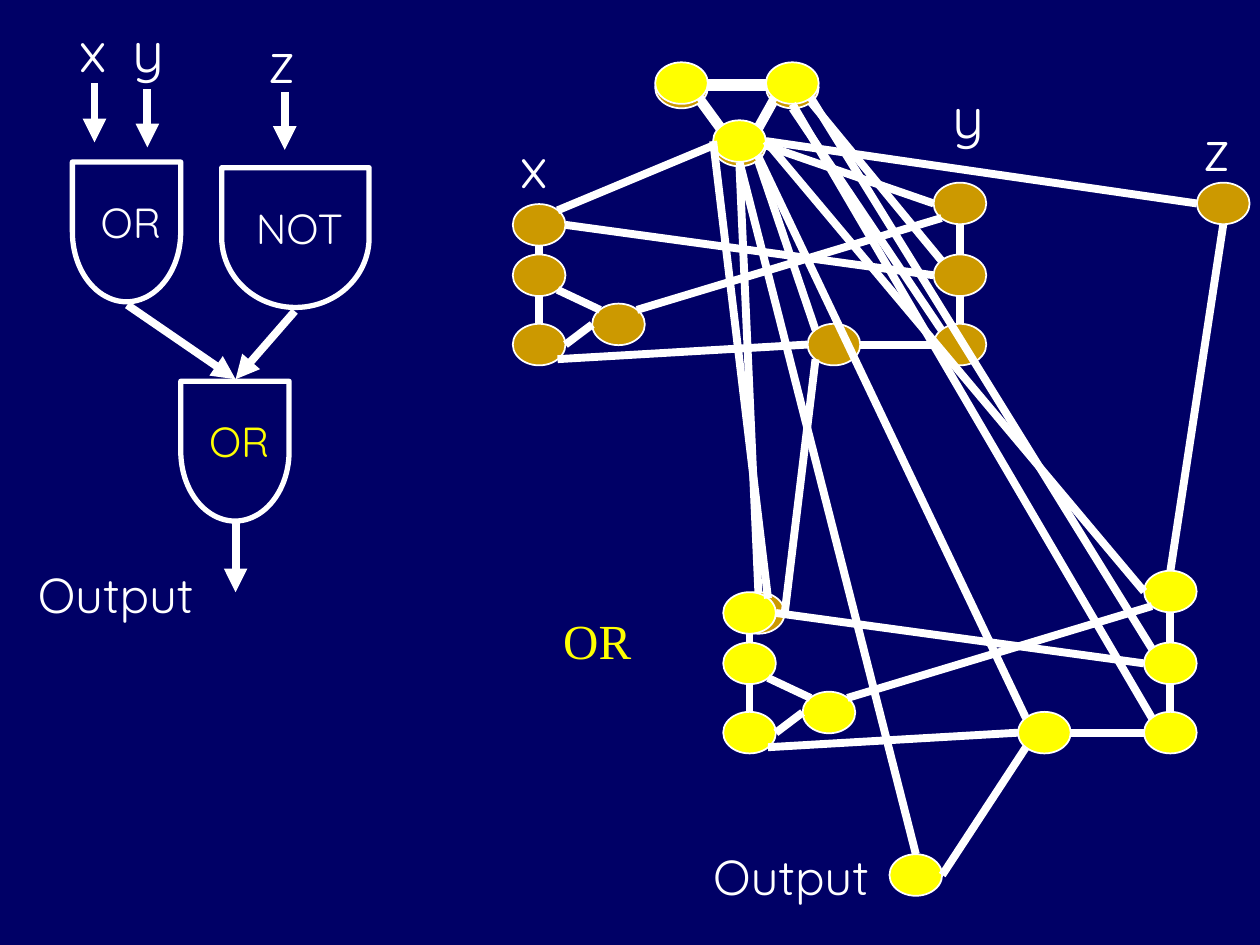
from lxml.etree import SubElement
from pptx import Presentation
from pptx.dml.color import RGBColor
from pptx.enum.shapes import MSO_CONNECTOR, MSO_SHAPE
from pptx.enum.text import MSO_ANCHOR, MSO_AUTO_SIZE, PP_ALIGN
from pptx.oxml.ns import qn
from pptx.util import Inches, Pt

NAVY = RGBColor(0x00, 0x00, 0x66)
WHITE = RGBColor(0xFF, 0xFF, 0xFF)
YELLOW = RGBColor(0xFF, 0xFF, 0x00)
GOLD = RGBColor(0xCC, 0x99, 0x00)
SANS, SERIF = "Quicksand", "Times New Roman"

presentation = Presentation()
presentation.slide_width, presentation.slide_height = Inches(10), Inches(7.5)
slide = presentation.slides.add_slide(presentation.slide_layouts[6])
slide.background.fill.solid()
slide.background.fill.fore_color.rgb = NAVY

# Grid of 100 columns by 75 rows
COLUMN = presentation.slide_width / 100
ROW = presentation.slide_height / 75

# Graph node size, and its ports as shares of that size
NODE_WIDTH, NODE_HEIGHT = 4.18, 3.3
PORTS = {
    "top": (0.5, 0), "bottom": (0.5, 1), "left": (0, 0.5), "right": (1, 0.5),
    "top left": (0.15, 0.15), "top right": (0.85, 0.15),
    "bottom left": (0.15, 0.85), "bottom right": (0.85, 0.85),
}


def add_line(start, end, arrow=False):
    (x1, y1), (x2, y2) = start, end
    connector = slide.shapes.add_connector(
        MSO_CONNECTOR.STRAIGHT, int(x1 * COLUMN), int(y1 * ROW), int(x2 * COLUMN), int(y2 * ROW))
    connector.line.color.rgb = WHITE
    connector.line.width = Pt(4.5)
    if arrow:
        SubElement(connector.line._get_or_add_ln(), qn("a:tailEnd"), type="triangle")
    SubElement(connector.element.spPr, qn("a:effectLst"))


def add_node(left, top, color):
    """Draw a graph node and return the positions of its ports."""
    node = slide.shapes.add_shape(
        MSO_SHAPE.OVAL, int(left * COLUMN), int(top * ROW),
        int(NODE_WIDTH * COLUMN), int(NODE_HEIGHT * ROW))
    node.shadow.inherit = False
    node.fill.solid()
    node.fill.fore_color.rgb = color
    node.line.color.rgb = WHITE
    node.line.width = Pt(1)
    return {port: (left + across * NODE_WIDTH, top + down * NODE_HEIGHT)
            for port, (across, down) in PORTS.items()}


captions = []  # text frame, text, size, font, colour, wrap

# Logic gates, turned so that the round side points down
for text, left, top, length, breadth, color in [
    ("OR", 4.5, 14.1, 11.1, 8.6, WHITE),
    ("OR", 13.1, 31.5, 11.1, 8.6, YELLOW),
    ("NOT", 17.9, 13, 11.1, 11.7, WHITE),
]:
    gate = slide.shapes.add_shape(
        MSO_SHAPE.FLOWCHART_DELAY, int(left * COLUMN), int(top * ROW),
        int(length * COLUMN), int(breadth * ROW))
    gate.rotation = 90
    gate.element.spPr.xfrm.set("flipV", "1")
    gate.shadow.inherit = False
    gate.fill.background()
    gate.line.color.rgb = WHITE
    gate.line.width = Pt(3)
    gate.text_frame.vertical_anchor = MSO_ANCHOR.MIDDLE
    gate.text_frame._txBody.bodyPr.set("vert", "eaVert")
    captions.append((gate.text_frame, text, 24, SANS, color, False))

# Circuit wires
for start, end in [
    ((10.1, 24.2), (18.7, 30.1)), ((18.7, 41.4), (18.7, 47)),
    ((7.5, 6.6), (7.5, 11.3)), ((11.7, 7.1), (11.7, 11.7)),
    ((22.6, 7.3), (22.6, 11.9)), ((23.4, 24.7), (18.7, 30.1)),
]:
    add_line(start, end, arrow=True)

# The OR gadget: a colour triangle, the input columns x and y, and inner nodes
TRIANGLE = {"first": (52, 5.3), "second": (60.8, 5.3), "base": (56.6, 9.9)}
GADGET = {
    "y3": (74.1, 25.7), "middle": (64.1, 25.7), "inner": (47, 24.1),
    "x1": (40.7, 16.2), "x2": (40.7, 20.2), "x3": (40.7, 25.7),
    "y1": (74.1, 14.5), "y2": (74.1, 20.2),
}
EDGES = [
    ("first", "right", "second", "left"),
    ("second", "bottom left", "base", "top right"),
    ("first", "bottom right", "base", "top left"),
    ("second", "bottom right", "y2", "top left"),
    ("second", "bottom", "y3", "top left"),
    ("base", "bottom right", "middle", "top left"),
    ("x1", "top right", "base", "left"),
    ("base", "right", "y1", "left"),
    ("x1", "right", "y2", "left"),
    ("output", "top", "base", "bottom"),
    ("output", "right", "middle", "bottom left"),
    ("x3", "bottom right", "middle", "left"),
    ("middle", "right", "y3", "left"),
    ("x2", "bottom", "x3", "top"),
    ("x1", "bottom", "x2", "top"),
    ("x2", "bottom right", "inner", "top left"),
    ("inner", "left", "x3", "right"),
    ("inner", "top right", "y1", "bottom left"),
    ("y1", "bottom", "y2", "top"),
    ("y2", "bottom", "y3", "top"),
]

# One gadget per OR gate; the second takes the output of the first as its x
for color, right, down, lift, output in [
    (GOLD, 0, 0, 0, (58.1, 47)),
    (YELLOW, 16.7, 30.8, 0.35, (70.6, 67.8)),
]:
    places = {name: (left, top - lift) for name, (left, top) in TRIANGLE.items()}
    places |= {name: (left + right, top + down) for name, (left, top) in GADGET.items()}
    places["output"] = output
    nodes = {name: add_node(*place, color) for name, place in places.items()}
    for source, source_port, target, target_port in EDGES:
        add_line(nodes[source][source_port], nodes[target][target_port])

# Input z joins the second gadget
z_node = add_node(95, 14.5, GOLD)
add_line(z_node["bottom"], nodes["y1"]["top"])
add_line(nodes["base"]["right"], z_node["left"])

# Labels of inputs, outputs and the second gadget
for text, left, top, width, height, size, font, color in [
    *[(name, left, top, 7.5, 6.3, 32, SANS, WHITE) for name, left, top in [
        ("x", 3.3, 0.8), ("y", 7.5, 0.8), ("z", 18.3, 1.7),
        ("x", 38.3, 10), ("y", 72.6, 6.1), ("z", 92.5, 8.7)]],
    ("OR", 41.7, 48, 13.1, 7, 28, SERIF, YELLOW),
    ("Output", 53.6, 66.7, 18.9, 5.7, 28, SANS, WHITE),
    ("Output", 0, 44.3, 18.9, 5.7, 28, SANS, WHITE),
]:
    label = slide.shapes.add_textbox(
        int(left * COLUMN), int(top * ROW), int(width * COLUMN), int(height * ROW))
    captions.append((label.text_frame, text, size, font, color, len(text) == 1))

# Text of gates and labels
for frame, text, size, font, color, wrap in captions:
    frame.margin_left = frame.margin_right = int(3 * COLUMN)
    frame.word_wrap = wrap
    frame.auto_size = MSO_AUTO_SIZE.SHAPE_TO_FIT_TEXT
    paragraph = frame.paragraphs[0]
    paragraph.alignment = PP_ALIGN.LEFT
    run = paragraph.add_run()
    run.text = text
    run.font.size = Pt(size)
    run.font.name = font
    run.font.color.rgb = color

presentation.save("out.pptx")
